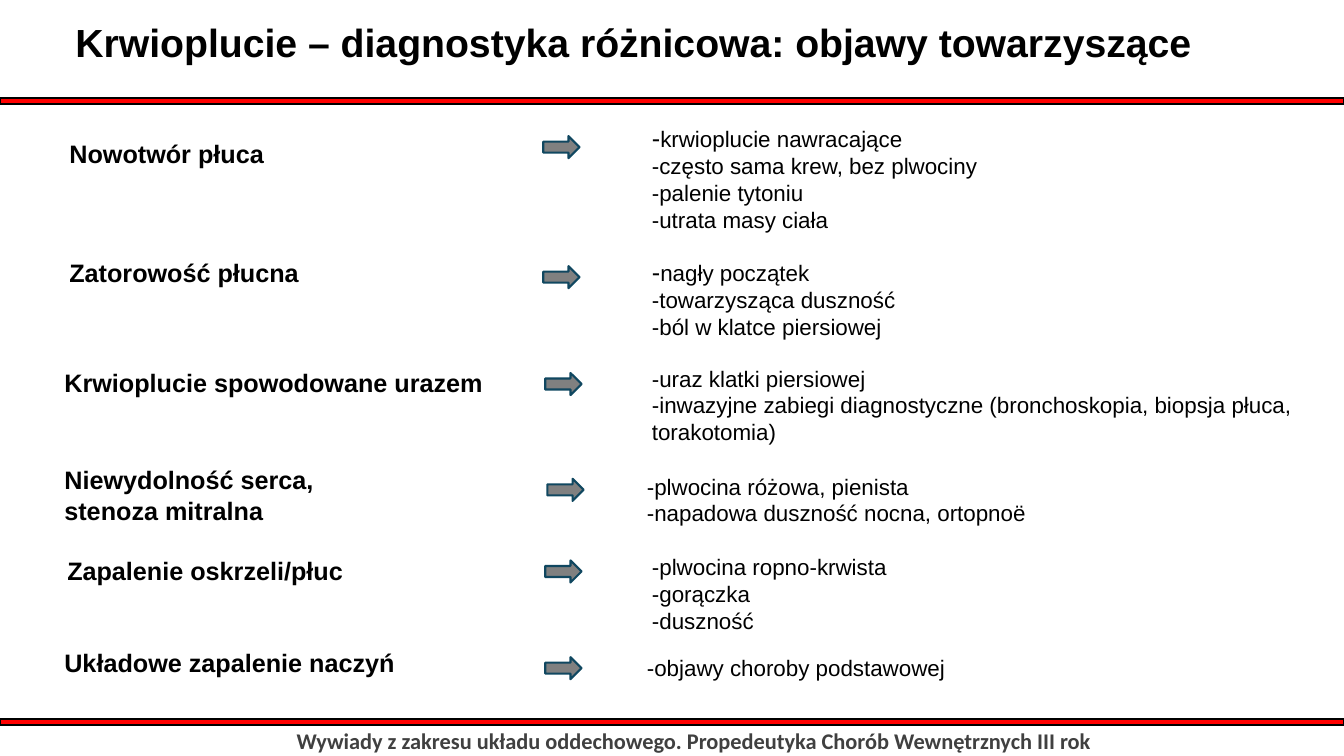
from dataclasses import dataclass

from pptx import Presentation
from pptx.dml.color import RGBColor
from pptx.enum.shapes import MSO_SHAPE
from pptx.enum.text import MSO_AUTO_SIZE, PP_ALIGN
from pptx.slide import Slide
from pptx.util import Pt

RECT = MSO_SHAPE.RECTANGLE
ARROW = MSO_SHAPE.RIGHT_ARROW
GROW = MSO_AUTO_SIZE.SHAPE_TO_FIT_TEXT
LEFT = PP_ALIGN.LEFT
CENTER = PP_ALIGN.CENTER

COLORS = {
    "black": "000000",
    "red": "FF0000",
    "grey": "808080",
    "teal": "104760",
    "dark": "404040",
}
WIDTH, HEIGHT = 960, 540


@dataclass
class Box:
    left: float
    top: float
    width: float
    height: float


@dataclass
class Run:
    text: str
    size: float = 16
    bold: bool = False
    font: str = "Arial"
    color: str = "black"


@dataclass
class Cause:
    name: str
    label: Box
    arrow: tuple[float, float]
    signs: Box
    lines: list[str]
    dash: float = 16  # size of the first dash


CAUSES = [
    Cause("Nowotwór płuca", Box(42.5, 95, 279.4, 29), (388.1, 97.2),
          Box(458.6, 83.5, 405.4, 87.1),
          ["krwioplucie nawracające", "często sama krew, bez plwociny",
           "palenie tytoniu", "utrata masy ciała"], 18),
    Cause("Zatorowość płucna", Box(42.5, 180, 259.2, 29), (388.1, 190.1),
          Box(458.6, 179.3, 450, 67.7),
          ["nagły początek", "towarzysząca duszność",
           "ból w klatce piersiowej"], 18),
    Cause("Krwioplucie spowodowane urazem", Box(38.9, 258.5, 315.4, 29),
          (389.5, 266.4), Box(458.6, 257, 478.1, 65.5),
          ["uraz klatki piersiowej",
           "inwazyjne zabiegi diagnostyczne (bronchoskopia, biopsja płuca, "
           "torakotomia)"]),
    Cause("Niewydolność serca, stenoza mitralna", Box(38.9, 328.3, 262.8, 51),
          (391, 342), Box(455, 334.1, 496.8, 46.1),
          ["plwocina różowa, pienista", "napadowa duszność nocna, ortopnoë"]),
    Cause("Zapalenie oskrzeli/płuc", Box(41, 393.1, 311.8, 29), (389.5, 400.3),
          Box(458.6, 391.7, 423.4, 65.5),
          ["plwocina ropno-krwista", "gorączka", "duszność"]),
    Cause("Układowe zapalenie naczyń", Box(38.9, 458.6, 298.1, 29),
          (389.5, 469.4), Box(455, 463.7, 457.2, 26.6),
          ["objawy choroby podstawowej"]),
]


def paint(name: str) -> RGBColor:
    return RGBColor.from_string(COLORS[name])


def add_form(slide: Slide, kind: MSO_SHAPE, box: Box, fill: str, line: str) -> None:
    form = slide.shapes.add_shape(
        kind, Pt(box.left), Pt(box.top), Pt(box.width), Pt(box.height))
    form.shadow.inherit = False
    form.fill.solid()
    form.fill.fore_color.rgb = paint(fill)
    form.line.color.rgb = paint(line)
    form.line.width = Pt(1.5)


def add_text(slide: Slide, box: Box, rows: list[list[Run]],
             align: PP_ALIGN = LEFT) -> None:
    frame = slide.shapes.add_textbox(
        Pt(box.left), Pt(box.top), Pt(box.width), Pt(box.height)).text_frame
    frame.word_wrap = True
    frame.auto_size = GROW
    for i, row in enumerate(rows):
        para = frame.add_paragraph() if i else frame.paragraphs[0]
        para.alignment = align
        for item in row:
            run = para.add_run()
            run.text = item.text
            run.font.name = item.font
            run.font.size = Pt(item.size)
            run.font.bold = item.bold
            run.font.color.rgb = paint(item.color)


def add_cause(slide: Slide, cause: Cause) -> None:
    add_text(slide, cause.label, [[Run(cause.name, 18, True)]])
    add_form(slide, ARROW, Box(*cause.arrow, 25.9, 15.8), "grey", "teal")
    first, *rest = cause.lines
    rows = [[Run("-", cause.dash), Run(first)]]
    rows += [[Run("-" + line)] for line in rest]
    add_text(slide, cause.signs, rows)


def main() -> None:
    deck = Presentation()
    deck.slide_width, deck.slide_height = Pt(WIDTH), Pt(HEIGHT)
    slide = deck.slides.add_slide(deck.slide_layouts[6])

    # Bars, title and footer
    for top in (69.8, 513.4):
        add_form(slide, RECT, Box(0, top, WIDTH, 4.3), "red", "black")
    title = "Krwioplucie – diagnostyka różnicowa: objawy towarzyszące"
    add_text(slide, Box(46.8, 9.4, 913, 41), [[Run(title, 28, True)]])
    footer = ("Wywiady z zakresu układu oddechowego. "
              "Propedeutyka Chorób Wewnętrznych III rok")
    add_text(slide, Box(177.8, 515.5, 635.8, 26.6),
             [[Run(footer, 16, True, "Calibri", "dark")]], CENTER)

    # Causes with their signs
    for cause in CAUSES:
        add_cause(slide, cause)

    deck.save("out.pptx")


if __name__ == "__main__":
    main()
